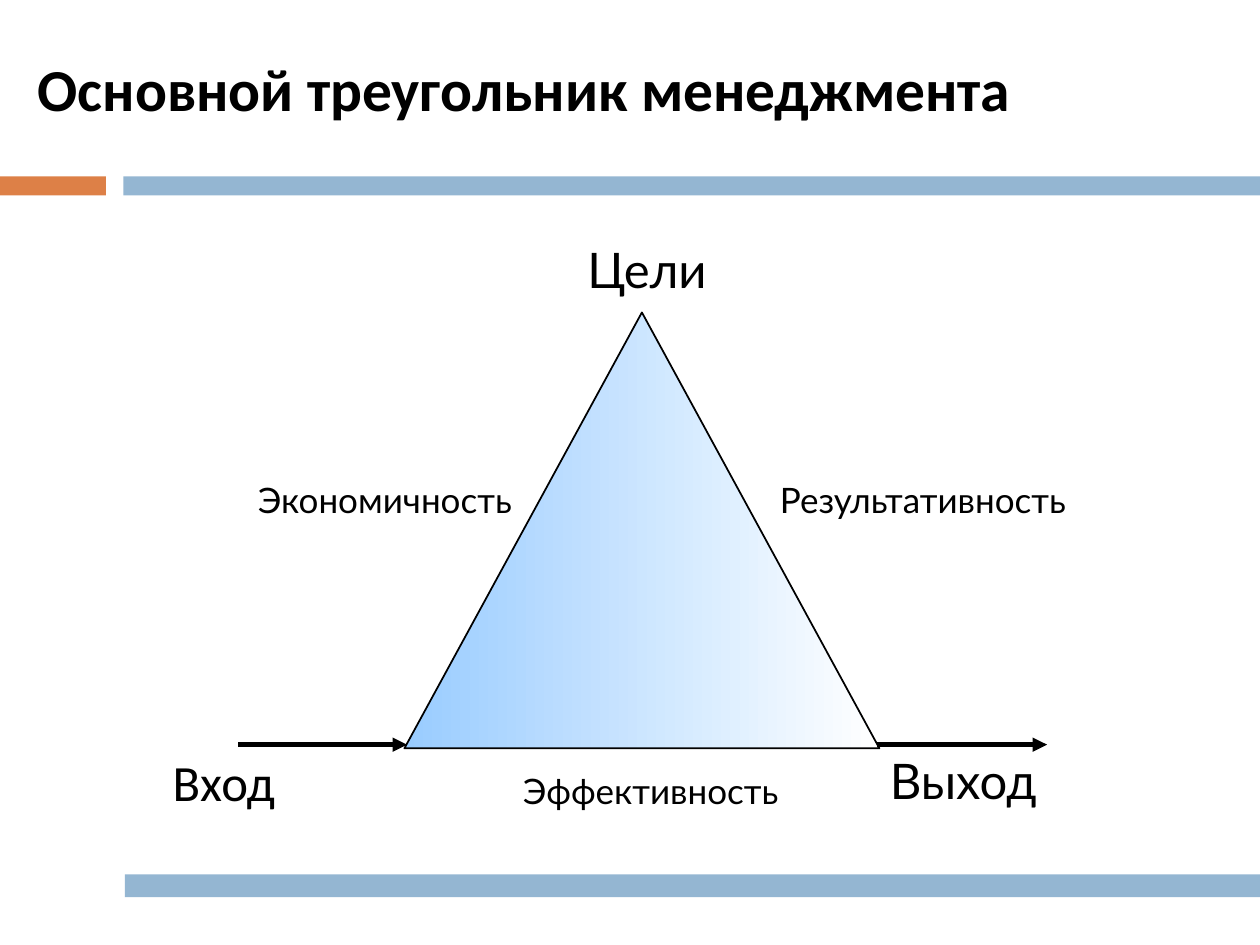
"""Build a slide showing the basic triangle of management."""
from lxml.etree import SubElement
from pptx import Presentation
from pptx.dml.color import RGBColor
from pptx.enum.shapes import MSO_CONNECTOR as CONNECTOR, MSO_SHAPE as SHAPE
from pptx.enum.text import MSO_ANCHOR as ANCHOR, MSO_AUTO_SIZE as AUTO_SIZE, PP_ALIGN as ALIGN
from pptx.oxml.ns import qn
from pptx.util import Inches, Pt

BLACK = RGBColor(0x00, 0x00, 0x00)
WHITE = RGBColor(0xFF, 0xFF, 0xFF)
ORANGE = RGBColor(0xDD, 0x80, 0x47)
BLUE = RGBColor(0x94, 0xB6, 0xD2)
LIGHT_BLUE = RGBColor(0x99, 0xCC, 0xFF)


def place(part, left, top, width, height):
    part.left, part.top = Inches(left), Inches(top)
    part.width, part.height = Inches(width), Inches(height)


def write(part, text, size, font_name, align, anchor=ANCHOR.TOP, bold=False):
    frame = part.text_frame
    frame.text = text
    frame.word_wrap = True
    frame.auto_size = AUTO_SIZE.NONE
    frame.vertical_anchor = anchor
    paragraph = frame.paragraphs[0]
    paragraph.alignment = align
    paragraph.space_before = Pt(0)
    font = paragraph.runs[0].font
    font.name, font.size, font.bold = font_name, Pt(size), bold
    font.color.rgb = BLACK


prs = Presentation()
prs.slide_width, prs.slide_height = Inches(10), Inches(7.5)
slide = prs.slides.add_slide(prs.slide_layouts[1])
shapes = slide.shapes

for left, top, width, height, color in [
    (0, 1.4, 0.84, 0.15, ORANGE),
    (0.98, 1.4, 9.02, 0.15, BLUE),
    (0.99, 6.94, 9.01, 0.18, BLUE),
]:
    bar = shapes.add_shape(SHAPE.RECTANGLE, Inches(left), Inches(top), Inches(width), Inches(height))
    bar.shadow.inherit = False
    bar.fill.solid()
    bar.fill.fore_color.rgb = color
    bar.line.fill.background()

title = shapes.title
place(title, 0.2, 0.16, 8.92, 1.08)
write(title, "Основной треугольник менеджмента", 34, "Calibri", ALIGN.LEFT, ANCHOR.MIDDLE, True)

entry = slide.placeholders[1]
place(entry, 1.27, 5.91, 2.03, 0.65)
write(entry, "Вход", 29, "Calibri", ALIGN.LEFT)
entry_props = entry.text_frame.paragraphs[0]._p.get_or_add_pPr()
entry_props.set("marL", "0")
entry_props.set("indent", "0")
SubElement(entry_props, qn("a:buNone"))

triangle = shapes.add_shape(
    SHAPE.ISOSCELES_TRIANGLE, Inches(3.21), Inches(2.48), Inches(3.77), Inches(3.46)
)
triangle.shadow.inherit = False
triangle.fill.gradient()
triangle.fill.gradient_angle = 0
for stop, position, color in zip(triangle.fill.gradient_stops, (0, 1), (LIGHT_BLUE, WHITE)):
    stop.position = position
    stop.color.rgb = color
triangle.line.color.rgb = BLACK
triangle.line.width = Pt(1)

for start, end in [(1.89, 3.23), (6.96, 8.31)]:
    arrow = shapes.add_connector(
        CONNECTOR.STRAIGHT, Inches(start), Inches(5.91), Inches(end), Inches(5.91)
    )
    arrow.line.color.rgb = BLACK
    arrow.line.width = Pt(2.75)
    SubElement(arrow.line._get_or_add_ln(), qn("a:tailEnd"), type="triangle")
    SubElement(arrow._element.spPr, qn("a:effectLst"))

for text, left, top, width, size in [
    ("Выход", 6.63, 5.91, 2.03, 28),
    ("Цели", 4.12, 1.85, 2.03, 28),
    ("Экономичность", 1.6, 3.75, 2.91, 20),
    ("Результативность", 5.87, 3.75, 2.91, 20),
    ("Эффективность", 3.71, 6.06, 2.91, 20),
]:
    label = shapes.add_textbox(Inches(left), Inches(top), Inches(width), Inches(0.65))
    write(label, text, size, "Lato", ALIGN.CENTER)

prs.save("out.pptx")
